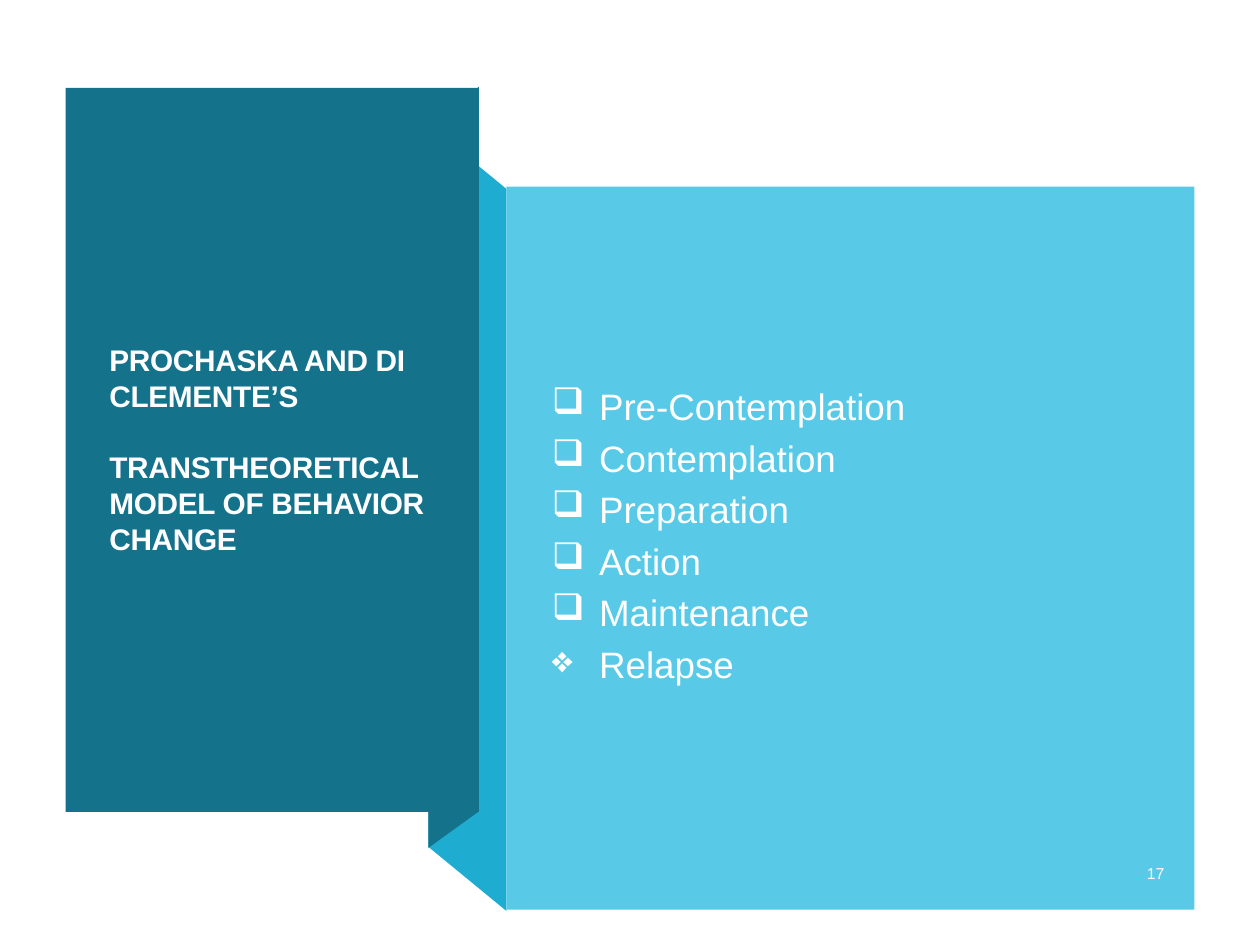
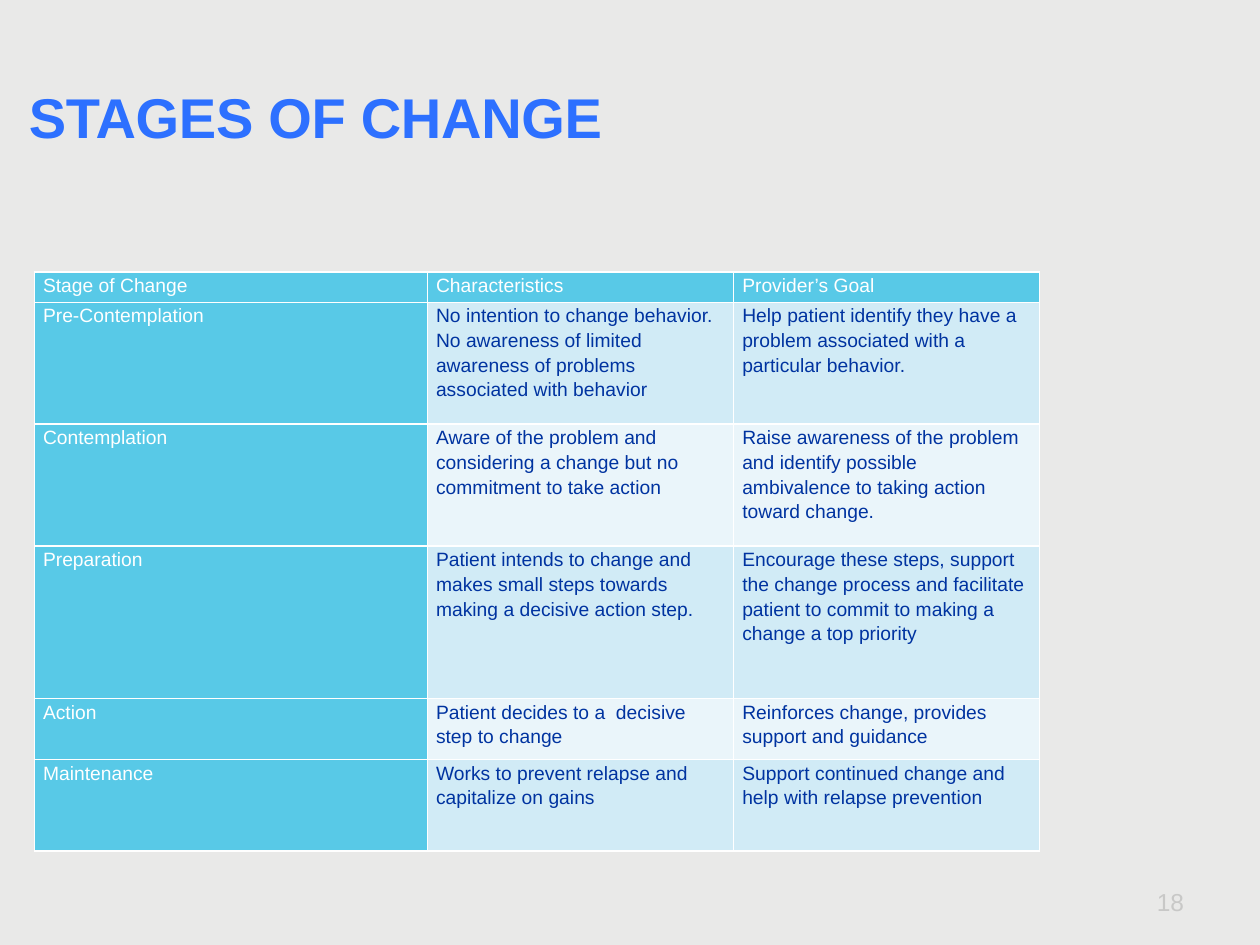
from lxml import etree
from pptx import Presentation
from pptx import util as u
from pptx.dml import color
from pptx.enum import shapes, text
from pptx.oxml import ns

Pt = u.Pt
FONT = "Arial"
WHITE, PAPER, GREY = "FFFFFF", "E9E9E8", "C8C8C7"
DARK_TEAL, TEAL, SKY = "14728B", "1EACD1", "58C9E7"
TITLE_BLUE, NAVY = "2D70FF", "0033A0"
BANDS = ("D1EBF6", "EAF5FA")

STAGES = ["Pre-Contemplation", "Contemplation", "Preparation", "Action", "Maintenance"]
HEADER = ["Stage of Change", "Characteristics", "Provider’s Goal"]
DETAILS = [
    ("No intention to change behavior. No awareness of limited awareness of problems "
     "associated with behavior",
     "Help patient identify they have a problem associated with a particular behavior."),
    ("Aware of the problem and considering a change but no commitment to take action",
     "Raise awareness of the problem and identify possible ambivalence to taking action "
     "toward change."),
    ("Patient intends to change and makes small steps towards making a decisive action step.",
     "Encourage these steps, support the change process and facilitate patient to commit to "
     "making a change a top priority"),
    ("Patient decides to a  decisive step to change",
     "Reinforces change, provides support and guidance"),
    ("Works to prevent relapse and capitalize on gains",
     "Support continued change and help with relapse prevention"),
]
LINE_HEIGHT = 17.43
ROW_LINES = [1, 4, 4, 5, 2, 3]
COLUMN_WIDTHS = [224.6, 175, 175]


def rgb(value):
    return color.RGBColor.from_string(value)


def child(parent, tag, **attributes):
    return etree.SubElement(parent, ns.qn(tag), attributes)


class Deck:
    """Holds the presentation, its text style and the slide being filled."""

    def __init__(self):
        self.prs = Presentation()
        self.prs.slide_width, self.prs.slide_height = Pt(720), Pt(540)
        self.s = None

    def slide(self, background):
        self.s = self.prs.slides.add_slide(self.prs.slide_layouts[6])
        fill = self.s.background.fill
        fill.solid()
        fill.fore_color.rgb = rgb(background)

    def paint(self, sp, fill):
        sp.shadow.inherit = False
        sp.fill.solid()
        sp.fill.fore_color.rgb = rgb(fill)
        sp.line.fill.background()

    def rect(self, x, y, w, h, fill):
        sp = self.s.shapes.add_shape(shapes.MSO_SHAPE.RECTANGLE, Pt(x), Pt(y), Pt(w), Pt(h))
        self.paint(sp, fill)

    def polygon(self, points, fill):
        (x, y), *rest = [(Pt(a), Pt(b)) for a, b in points]
        builder = self.s.shapes.build_freeform(x, y)
        builder.add_line_segments(rest, close=True)
        self.paint(builder.convert_to_shape(), fill)

    def run(self, p, words, size, ink, bold=False):
        r = p.add_run()
        r.text = words
        r.font.name, r.font.size, r.font.bold = FONT, Pt(size), bold
        r.font.color.rgb = rgb(ink)
        return r

    def textbox(self, x, y, w, h, lines, size, ink, bold=False):
        """Adds one paragraph per line, centred vertically, and returns the paragraphs."""
        tf = self.s.shapes.add_textbox(Pt(x), Pt(y), Pt(w), Pt(h)).text_frame
        tf.word_wrap = True
        tf.vertical_anchor = text.MSO_ANCHOR.MIDDLE
        for i, line in enumerate(lines):
            p = tf.add_paragraph() if i else tf.paragraphs[0]
            self.run(p, line, size, ink, bold)
        return tf.paragraphs

    def title(self, x, y, w, h, lines, size, ink):
        paragraphs = self.textbox(x, y, w, h, lines, size, ink, bold=True)
        for p in paragraphs:
            p.line_spacing = Pt(size * 1.2)
            p.runs[0].font._element.set("spc", "-20")
        for p in paragraphs[1:]:
            p.space_before = Pt(size * 1.2)

    def bullets(self, x, y, w, h, items, size, ink):
        """Adds a list from (bullet, words) pairs."""
        paragraphs = self.textbox(x, y, w, h, [words for _, words in items], size, ink)
        indent = Pt(27)
        for p, (bullet, _) in zip(paragraphs, items):
            p.line_spacing, p.space_before = Pt(24.2), Pt(5.2)
            pPr = p._p.get_or_add_pPr()
            pPr.set("marL", str(indent))
            pPr.set("indent", str(-indent))
            child(pPr, "a:buChar", char=bullet)

    def page_number(self, x, y, number, size, ink):
        p = self.textbox(x, y, 40, 25, [number], size, ink)[0]
        p.alignment = text.PP_ALIGN.RIGHT

    def cell(self, cell, words, ink, fill):
        cell.margin_left = cell.margin_right = Pt(5)
        cell.margin_top = cell.margin_bottom = 0
        p = cell.text_frame.paragraphs[0]
        p.line_spacing = 1.15
        self.run(p, words, 11, ink)
        tcPr = cell._tc.get_or_add_tcPr()
        for side in ("a:lnL", "a:lnR", "a:lnT", "a:lnB"):
            line = child(tcPr, side, w=str(Pt(1)))
            child(child(line, "a:solidFill"), "a:srgbClr", val=WHITE)
        cell.fill.solid()
        cell.fill.fore_color.rgb = rgb(fill)

    def table(self, x, y, widths, heights, rows):
        """Fills the header row and first column in one colour and bands the rest."""
        frame = self.s.shapes.add_table(len(rows), len(widths), Pt(x), Pt(y),
                                        Pt(sum(widths)), Pt(sum(heights)))
        table = frame.table
        for column, width in zip(table.columns, widths):
            column.width = Pt(width)
        for i, (height, row) in enumerate(zip(heights, rows)):
            table.rows[i].height = Pt(height)
            for j, words in enumerate(row):
                heading = i == 0 or j == 0
                ink, fill = (WHITE, SKY) if heading else (NAVY, BANDS[(i - 1) % 2])
                self.cell(table.cell(i, j), words, ink, fill)


def model_slide(deck):
    deck.slide(WHITE)
    deck.polygon([(289.4, 520.6), (244.8, 484), (244.8, 71.3), (289.4, 108)], TEAL)
    deck.polygon([(273.6, 463.7), (244.8, 484.5), (244.8, 70.5), (273.6, 49.7)], DARK_TEAL)
    deck.rect(37.5, 50.3, 236.1, 413.7, DARK_TEAL)
    deck.title(55.4, 77, 200.2, 359.3,
               ["PROCHASKA AND DI CLEMENTE’S", "TRANSTHEORETICAL MODEL OF BEHAVIOR CHANGE"],
               17, WHITE)
    deck.rect(289.4, 106.6, 393.1, 413.3, SKY)
    items = [("❑", stage) for stage in STAGES] + [("❖", "Relapse")]
    deck.bullets(308.2, 135.4, 351.4, 341.3, items, 21, "FEFFFF")
    deck.page_number(632.5, 486.5, "17", 9, WHITE)


def stages_slide(deck):
    deck.slide(PAPER)
    deck.title(9.4, 21.6, 648, 90, ["STAGES OF CHANGE"], 32, TITLE_BLUE)
    rows = [HEADER] + [(stage, *detail) for stage, detail in zip(STAGES, DETAILS)]
    deck.table(19.6, 155.3, COLUMN_WIDTHS, [n * LINE_HEIGHT for n in ROW_LINES], rows)
    deck.page_number(643.7, 503, "18", 14, GREY)


def main():
    deck = Deck()
    model_slide(deck)
    stages_slide(deck)
    deck.prs.save("out.pptx")


if __name__ == "__main__":
    main()
